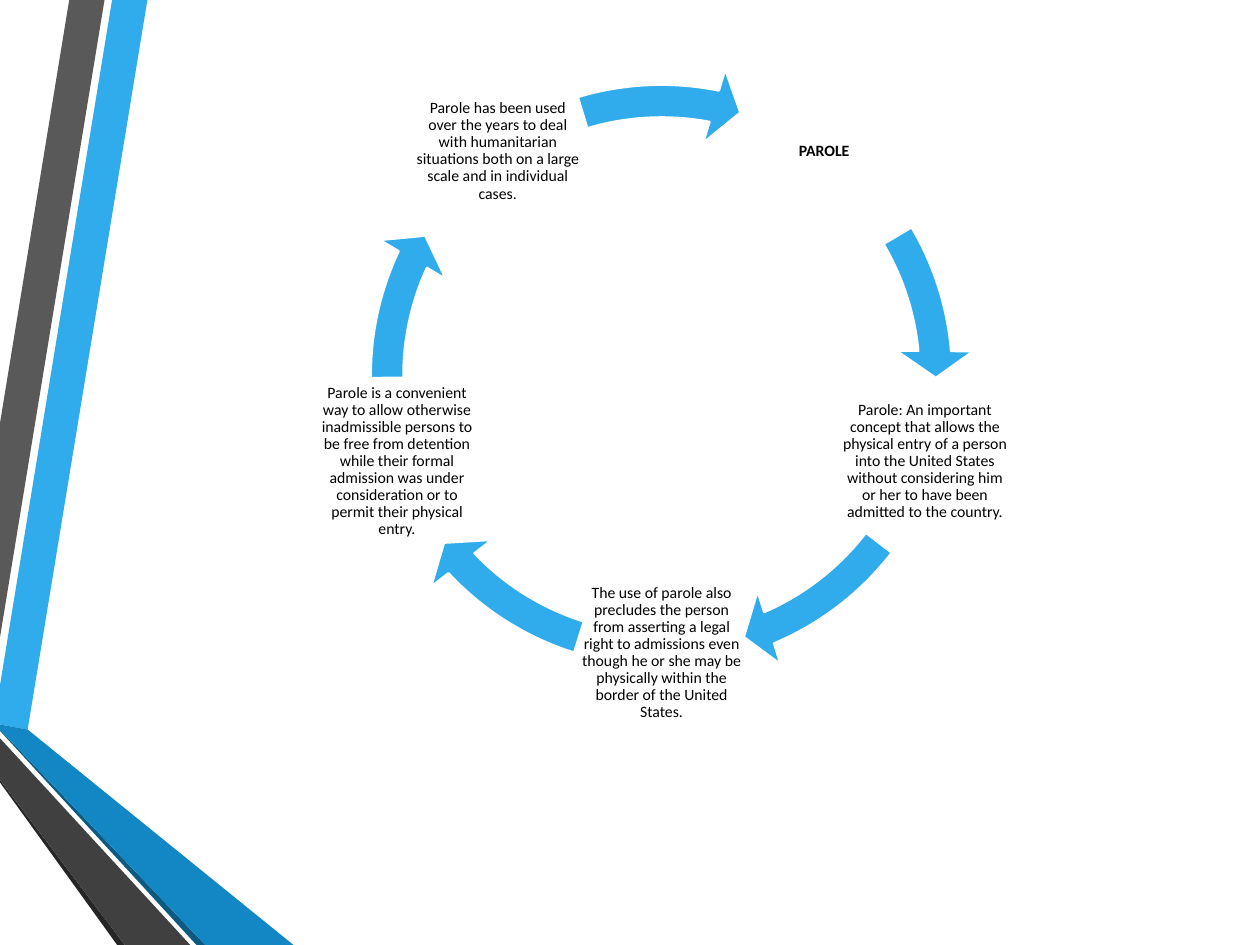
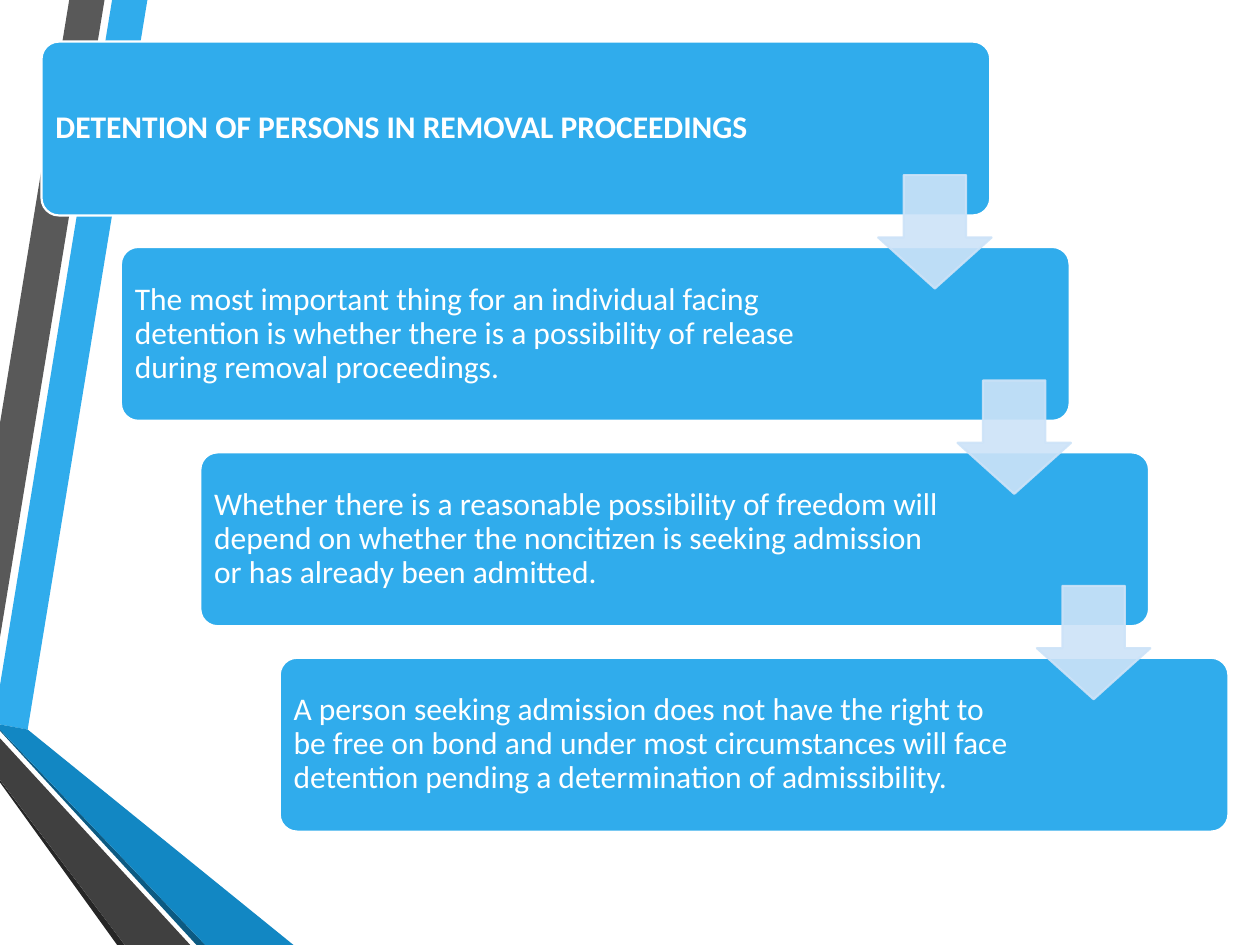
"""Build two slides on parole and detention: a text cycle and a staircase of steps."""
from lxml.etree import SubElement
from pptx import Presentation
from pptx.dml.color import RGBColor
from pptx.enum.shapes import MSO_SHAPE
from pptx.enum.text import MSO_ANCHOR, PP_ALIGN
from pptx.oxml.ns import qn
from pptx.util import Pt

PX = 9144
BLUE, PALE, WHITE, BLACK = "30ACEC", "CDE3F8", "FFFFFF", "000000"
FONT = "Calibri"

BANDS = [
    (BLUE, [(0, 544), (0, 575), (22, 579), (117, 0), (89, 0)]),
    ("595959", [(83, 0), (55, 0), (0, 336), (0, 506)]),
    ("262626", [(0, 619), (0, 621), (93, 750), (99, 750)]),
    ("0C5A82", [(0, 579), (0, 580), (156, 750), (163, 750)]),
    ("1287C3", [(0, 579), (163, 750), (233, 750), (22, 579), (0, 575)]),
    ("404040", [(0, 619), (99, 750), (151, 750), (0, 586)]),
]

CYCLE = [
    (588, 54, 329.4, 354.9, "PAROLE"),
    (668, 300, 37.6, 66.9,
     "Parole: An important concept that allows the physical entry of a person into "
     "the United States without considering him or her to have been admitted to the country."),
    (459, 452, 107.5, 136.8,
     "The use of parole also precludes the person from asserting a legal right to admissions "
     "even though he or she may be physically within the border of the United States."),
    (249, 300, 179.5, 205,
     "Parole is a convenient way to allow otherwise inadmissible persons to be free from "
     "detention while their formal admission was under consideration or to permit their "
     "physical entry."),
    (329, 54, 253.3, 281.1,
     "Parole has been used over the years to deal with humanitarian situations both on a "
     "large scale and in individual cases."),
]

STEPS = [
    "DETENTION OF PERSONS IN REMOVAL PROCEEDINGS",
    "The most important thing for an individual facing detention is whether there is a "
    "possibility of release during removal proceedings.",
    "Whether there is a reasonable possibility of freedom will depend on whether the "
    "noncitizen is seeking admission or has already been admitted.",
    "A person seeking admission does not have the right to be free on bond and under most "
    "circumstances will face detention pending a determination of admissibility.",
]


def paint(sp, fill, line=None, alpha=None):
    sp.shadow.inherit = False
    sp.fill.solid()
    sp.fill.fore_color.rgb = RGBColor.from_string(fill)
    if line:
        sp.line.color.rgb = RGBColor.from_string(line)
        sp.line.width = Pt(1.25)
    else:
        sp.line.fill.background()
    if alpha:
        for clr in list(sp._element.spPr.iter(qn("a:srgbClr"))):
            SubElement(clr, qn("a:alpha")).set("val", str(alpha * 1000))


def add_text(s, box, text, size, color, inset, align, bold):
    tf = s.shapes.add_textbox(*[v * PX for v in box]).text_frame
    tf.word_wrap = True
    tf.vertical_anchor = MSO_ANCHOR.MIDDLE
    tf.margin_left = tf.margin_right = tf.margin_top = tf.margin_bottom = inset * PX
    tf.text = text
    p = tf.paragraphs[0]
    p.alignment = align
    p.line_spacing = 0.9
    r = p.runs[0]
    r.font.name = FONT
    r.font.size = Pt(size)
    r.font.bold = bold
    r.font.color.rgb = RGBColor.from_string(color)


prs = Presentation()
prs.slide_width, prs.slide_height = 1000 * PX, 750 * PX
cycle, stairs = [prs.slides.add_slide(prs.slide_layouts[6]) for _ in range(2)]

for s in (cycle, stairs):
    for color, points in BANDS:
        fb = s.shapes.build_freeform(*points[0], scale=PX)
        fb.add_line_segments(points[1:], close=True)
        paint(fb.convert_to_shape(), color)

for i, (x, y, start, end, text) in enumerate(CYCLE):
    add_text(cycle, (x, y, 132, 132), text, 9, BLACK, 1, PP_ALIGN.CENTER, i == 0)
    sp = cycle.shapes.add_shape(MSO_SHAPE.CIRCULAR_ARROW, 277 * PX, 50 * PX, 496 * PX, 496 * PX)
    for j, value in enumerate((0.052, 3.361, end * 0.6, start * 0.6, 0.061)):
        sp.adjustments[j] = value
    paint(sp, BLUE, WHITE)

for i, text in enumerate(STEPS):
    x, y = 33 + 63 * i, 33 + 163 * i
    sp = stairs.shapes.add_shape(MSO_SHAPE.ROUNDED_RECTANGLE, x * PX, y * PX, 753 * PX, 138 * PX)
    sp.adjustments[0] = 0.1
    paint(sp, BLUE, WHITE)
    add_text(stairs, (x + 4, y + 4, 593, 130), text, 18, WHITE, 7, PP_ALIGN.LEFT, i == 0)

for i in range(len(STEPS) - 1):
    sp = stairs.shapes.add_shape(
        MSO_SHAPE.DOWN_ARROW, (697 + 63 * i) * PX, (139 + 163 * i) * PX, 90 * PX, 90 * PX)
    sp.adjustments[0], sp.adjustments[1] = 0.55, 0.45
    paint(sp, PALE, PALE, alpha=90)

prs.save("out.pptx")
